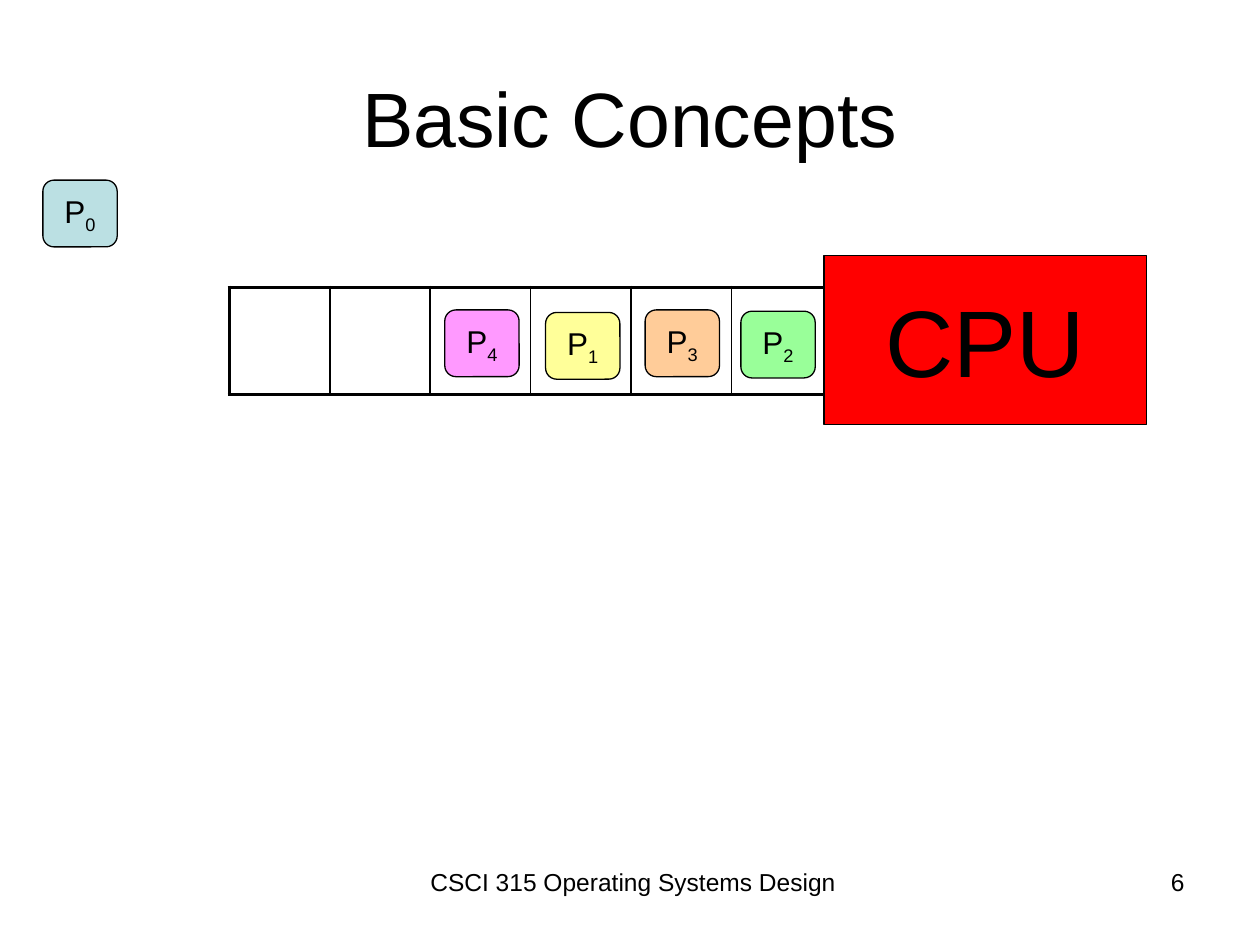
import dataclasses

import pptx
import pptx.dml.color
import pptx.enum.shapes
import pptx.enum.text
import pptx.oxml.ns
import pptx.util
from lxml import etree

ALIGN = pptx.enum.text.PP_ALIGN
ANCHOR = pptx.enum.text.MSO_ANCHOR
SHAPE = pptx.enum.shapes.MSO_SHAPE


@dataclasses.dataclass(frozen=True)
class Theme:
    font: str = "Arial"
    ink: str = "000000"
    cpu: str = "FF0000"
    blue: str = "BBE0E3"
    yellow: str = "FFFF99"
    orange: str = "FFCC99"
    pink: str = "FF99FF"
    green: str = "99FF99"
    title_size: float = 44
    cpu_size: float = 54
    process_size: float = 18
    footer_size: float = 14
    outline: float = 0.75
    divider: float = 1
    border: float = 2.25


class SlideBuilder:
    COLUMNS = 100
    ROWS = 75

    def __init__(self, presentation, theme):
        self.theme = theme
        self.column = presentation.slide_width / self.COLUMNS
        self.row = presentation.slide_height / self.ROWS
        self.slide = presentation.slides.add_slide(presentation.slide_layouts[5])

    def box(self, left, top, width, height):
        return (round(left * self.column), round(top * self.row),
                round(width * self.column), round(height * self.row))

    def label(self, shape, text, size, align=ALIGN.CENTER, anchor=ANCHOR.MIDDLE,
              wrap=True, subscript=""):
        frame = shape.text_frame
        frame.word_wrap = wrap
        frame.vertical_anchor = anchor
        paragraph = frame.paragraphs[0]
        paragraph.alignment = align
        for content, baseline in ((text, None), (subscript, "-25000")):
            if not content:
                continue
            run = paragraph.add_run()
            run.text = content
            run.font.name = self.theme.font
            run.font.size = pptx.util.Pt(size)
            run.font.color.rgb = pptx.dml.color.RGBColor.from_string(self.theme.ink)
            if baseline:
                run._r.get_or_add_rPr().set("baseline", baseline)

    def title(self, text, *place):
        shape = self.slide.shapes.title
        shape.left, shape.top, shape.width, shape.height = self.box(*place)
        self.label(shape, text, self.theme.title_size)

    def footer(self, text, align, *place):
        shape = self.slide.shapes.add_textbox(*self.box(*place))
        self.label(shape, text, self.theme.footer_size, align, ANCHOR.TOP)

    def block(self, kind, fill, *place):
        shape = self.slide.shapes.add_shape(kind, *self.box(*place))
        shape.shadow.inherit = False
        shape.fill.solid()
        shape.fill.fore_color.rgb = pptx.dml.color.RGBColor.from_string(fill)
        shape.line.color.rgb = pptx.dml.color.RGBColor.from_string(self.theme.ink)
        shape.line.width = pptx.util.Pt(self.theme.outline)
        return shape

    def process(self, number, fill, left, top):
        shape = self.block(SHAPE.ROUNDED_RECTANGLE, fill, left, top, 5.9, 5.3)
        self.label(shape, "P", self.theme.process_size, wrap=False, subscript=number)

    def processor(self, text, *place):
        shape = self.block(SHAPE.RECTANGLE, self.theme.cpu, *place)
        self.label(shape, text, self.theme.cpu_size, wrap=False)

    def cell_border(self, cell, side, width):
        properties = cell._tc.get_or_add_tcPr()
        line = etree.SubElement(properties, pptx.oxml.ns.qn(f"a:{side}"),
                                w=str(pptx.util.Pt(width)))
        fill = etree.SubElement(line, pptx.oxml.ns.qn("a:solidFill"))
        etree.SubElement(fill, pptx.oxml.ns.qn("a:srgbClr"), val=self.theme.ink)

    def queue(self, slots, *place):
        table = self.slide.shapes.add_table(1, slots, *self.box(*place)).table
        table.first_row = False
        table.horz_banding = False
        thin, thick = self.theme.divider, self.theme.border
        for index, cell in enumerate(table.iter_cells()):
            self.cell_border(cell, "lnL", thick if index == 0 else thin)
            self.cell_border(cell, "lnR", thick if index == slots - 1 else thin)
            self.cell_border(cell, "lnT", thick)
            self.cell_border(cell, "lnB", thick)
            cell.fill.background()


def main():
    presentation = pptx.Presentation()
    presentation.slide_width = pptx.util.Inches(10)
    presentation.slide_height = pptx.util.Inches(7.5)
    theme = Theme()
    builder = SlideBuilder(presentation, theme)

    builder.footer("CSCI 315 Operating Systems Design", ALIGN.CENTER, 29.4, 68.3, 41.7, 5.2)
    builder.footer("6", ALIGN.RIGHT, 71.7, 68.3, 23.3, 5.2)
    builder.title("Basic Concepts", 5, 3, 90, 12.5)

    for number, fill, left, top in (
        ("0", theme.blue, 3.4, 14.3),
        ("1", theme.yellow, 43.3, 24.8),
        ("3", theme.orange, 51.2, 24.6),
        ("4", theme.pink, 35.3, 24.6),
    ):
        builder.process(number, fill, left, top)

    builder.queue(8, 18.2, 22.8, 63.8, 8.5)
    builder.processor("CPU", 65.4, 20.3, 25.6, 13.4)
    builder.process("2", theme.green, 58.8, 24.7)

    presentation.save("out.pptx")


if __name__ == "__main__":
    main()
